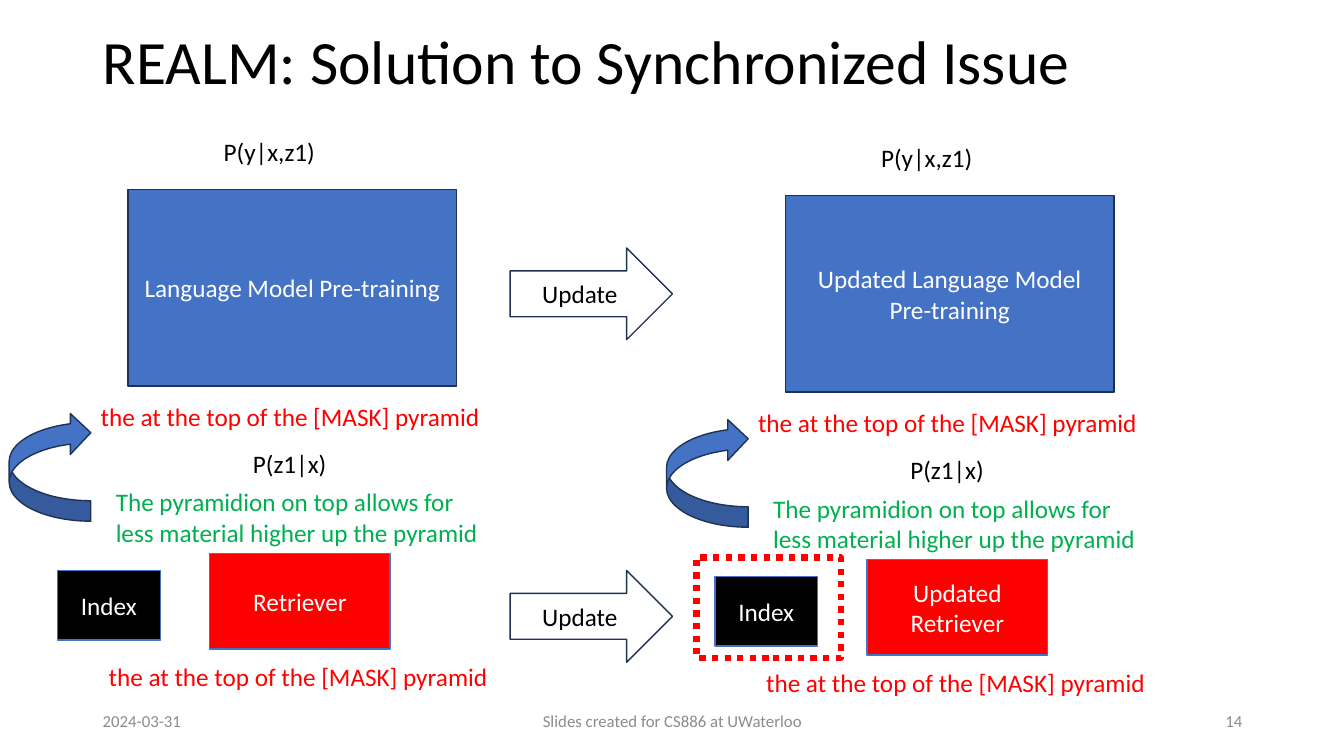
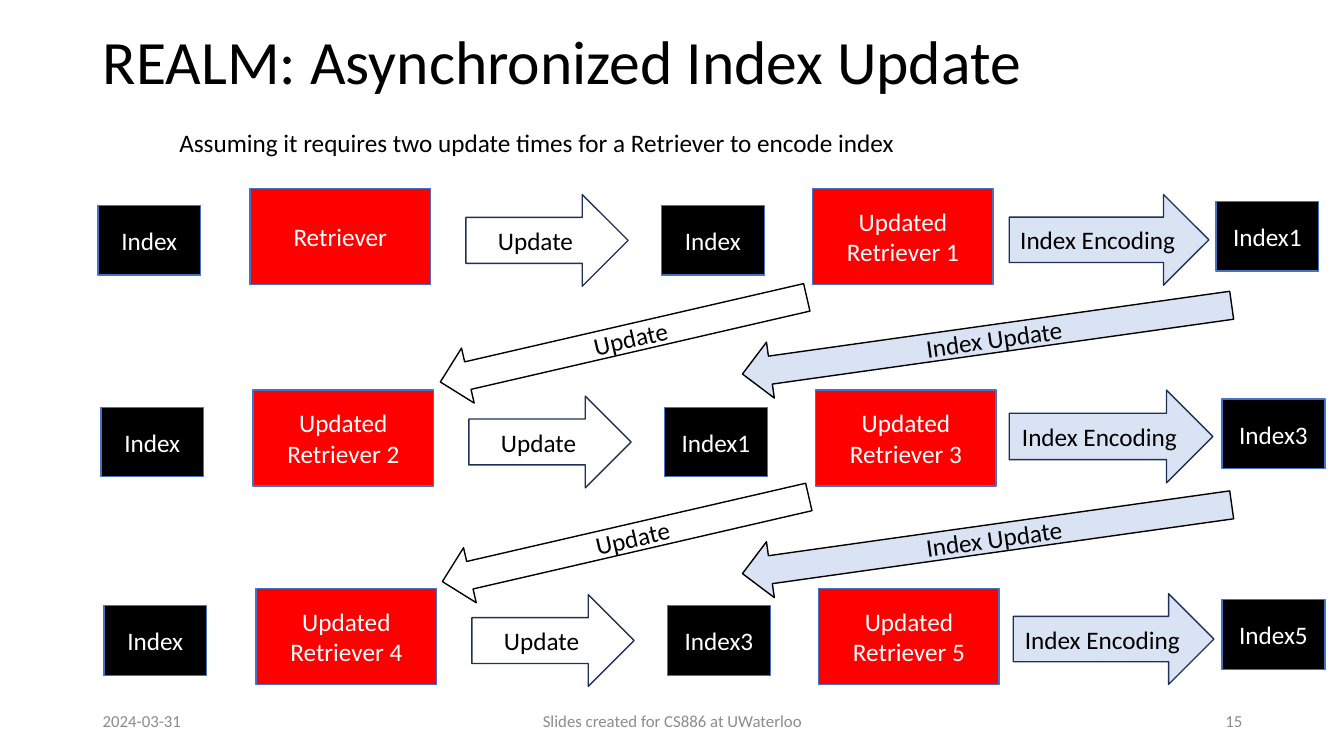
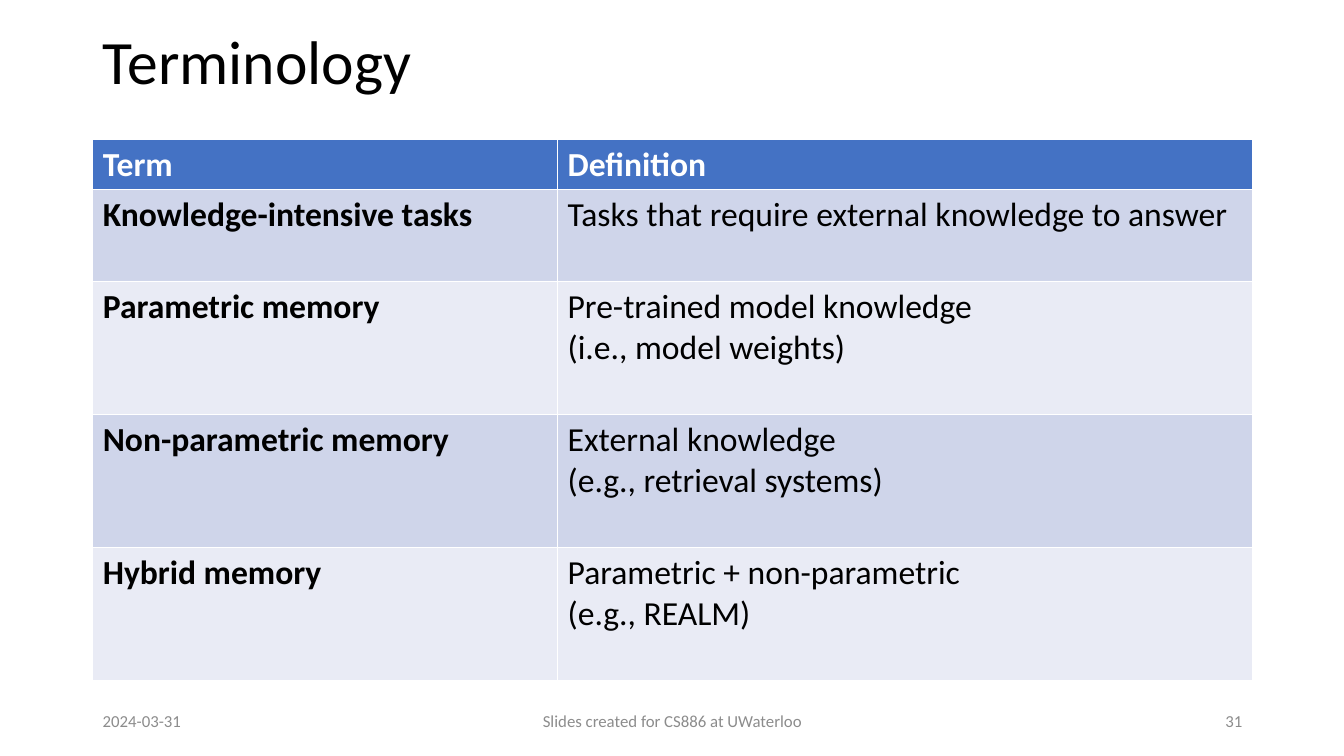
from pptx import Presentation
from pptx import util as u
from pptx.dml.color import RGBColor
from pptx.enum import dml, shapes, text

FONT = "Calibri"
BLACK, WHITE, GRAY = "000000", "FFFFFF", "8C8C8C"
RED, GREEN, BLUE, NAVY, PALE = "FF0000", "00B050", "4472C4", "1E3256", "DAE3F3"
BANDS = ["CFD5EA", "E9EBF5"]
KIND = shapes.MSO_SHAPE
ALIGN = text.PP_ALIGN
MIDDLE = text.MSO_ANCHOR.MIDDLE
rgb = RGBColor.from_string


def write(frame, words, color=BLACK, size=18, align=ALIGN.LEFT, bold=False):
    """Fill a text frame, one paragraph per line, in a single style."""
    frame.word_wrap = True
    frame.text = words
    for para in frame.paragraphs:
        para.alignment = align
        para.font.name = FONT
        para.font.size = u.Pt(size)
        para.font.bold = bold
        para.font.color.rgb = rgb(color)


def add_block(page, kind, place, words="", fill=None, line=NAVY, color=WHITE, angle=0):
    """Add an outlined shape with a centred label; place is left, top, width, height."""
    box = page.shapes.add_shape(kind, *map(u.Inches, place))
    box.shadow.inherit = False
    box.rotation = angle
    if fill:
        box.fill.solid()
        box.fill.fore_color.rgb = rgb(fill)
    else:
        box.fill.background()
    box.line.color.rgb = rgb(line)
    box.line.width = u.Pt(1)
    if words:
        box.text_frame.vertical_anchor = MIDDLE
        write(box.text_frame, words, color, align=ALIGN.CENTER)
    return box


deck = Presentation()
deck.slide_width = u.Inches(13.33)
deck.slide_height = u.Inches(7.5)

# Title and footer of every page
pages = []
for heading, number in [
    ("REALM: Solution to Synchronized Issue", "14"),
    ("REALM: Asynchronized Index Update", "15"),
    ("Terminology", "31"),
]:
    page = deck.slides.add_slide(deck.slide_layouts[5])
    pages.append(page)
    title = page.shapes.title
    title.left, title.top = u.Inches(0.92), u.Inches(0.15)
    title.width, title.height = u.Inches(11.5), u.Inches(0.99)
    title.text_frame.vertical_anchor = MIDDLE
    title.text_frame.auto_size = text.MSO_AUTO_SIZE.NONE
    write(title.text_frame, heading, size=44)
    title.text_frame.paragraphs[0].line_spacing = 0.9
    for left, width, words, align in [
        (0.92, 3, "2024-03-31", ALIGN.LEFT),
        (4.42, 4.5, "Slides created for CS886 at UWaterloo", ALIGN.CENTER),
        (9.42, 3, number, ALIGN.RIGHT),
    ]:
        footer = page.shapes.add_textbox(
            u.Inches(left), u.Inches(6.95), u.Inches(width), u.Inches(0.4))
        footer.text_frame.vertical_anchor = MIDDLE
        write(footer.text_frame, words, GRAY, 12, align)

sync_page, async_page, terms_page = pages

# The model before and after an update
masked = "the at the top of the [MASK] pyramid"
passage = "The pyramidion on top allows for less material higher up the pyramid"
for dx, dy, model, retriever in [
    (0, 0, "Language Model Pre-training", "Retriever"),
    (6.52, 0.06, "Updated Language Model Pre-training", "Updated Retriever"),
]:
    add_block(sync_page, KIND.RECTANGLE, (1.27 + dx, 1.88 + dy, 3.26, 1.95), model, BLUE)
    add_block(sync_page, KIND.RECTANGLE, (2.08 + dx, 5.49 + dy, 1.79, 0.95),
              retriever, RED, BLUE)
    add_block(sync_page, KIND.RECTANGLE, (0.57 + dx, 5.66 + dy, 1.02, 0.69),
              "Index", BLACK, BLUE)
    loop = add_block(sync_page, KIND.CURVED_RIGHT_ARROW,
                     (0.09 + dx, 4.09 + dy, 0.81, 1.08), fill=BLUE, angle=180)
    loop._element.spPr.get_or_add_xfrm().set("flipH", "1")
    for left, top, width, height, words, color in [
        (2.12, 1.3, 1.71, 0.4, "P(y|x,z1)", BLACK),
        (0.9, 3.93, 3.99, 0.4, masked, RED),
        (2.41, 4.4, 0.99, 0.4, "P(z1|x)", BLACK),
        (1.05, 4.78, 3.86, 0.71, passage, GREEN),
        (0.98, 6.51, 3.99, 0.4, masked, RED),
    ]:
        label = sync_page.shapes.add_textbox(
            u.Inches(left + dx), u.Inches(top + dy), u.Inches(width), u.Inches(height))
        write(label.text_frame, words, color)

for top in (2.46, 5.66):
    add_block(sync_page, KIND.RIGHT_ARROW, (5.06, top, 1.61, 0.91), "Update", color=BLACK)
stale_frame = add_block(sync_page, KIND.RECTANGLE, (6.91, 5.53, 1.43, 1), line=RED)
stale_frame.line.width = u.Pt(4.5)
stale_frame.line.dash_style = dml.MSO_LINE.ROUND_DOT

# Three rounds of updates, each ending in a newly encoded index
note = async_page.shapes.add_textbox(
    u.Inches(1.68), u.Inches(1.21), u.Inches(9.12), u.Inches(0.4))
write(note.text_frame,
      "Assuming it requires two update times for a Retriever to encode index")

for dx, top, before, index, after, encoding, new_index, new_place in [
    (0, 1.87, "Retriever", "Index", "Updated Retriever 1",
     (10.01, 1.93, 1.98, 0.9), "Index1", (12.06, 2)),
    (0.03, 3.87, "Updated Retriever 2", "Index1", "Updated Retriever 3",
     (10.01, 3.87, 2.02, 0.92), "Index3", (12.12, 3.96)),
    (0.06, 5.84, "Updated Retriever 4", "Index3", "Updated Retriever 5",
     (10.05, 5.89, 1.99, 0.9), "Index5", (12.12, 5.95)),
]:
    for left, words in [(2.48, before), (8.06, after)]:
        add_block(async_page, KIND.RECTANGLE, (left + dx, top, 1.79, 0.95),
                  words, RED, BLUE)
    for place, words in [
        ((0.97 + dx, top + 0.17), "Index"),
        ((6.56 + dx, top + 0.17), index),
        (new_place, new_index),
    ]:
        add_block(async_page, KIND.RECTANGLE, (*place, 1.02, 0.69), words, BLACK, BLUE)
    add_block(async_page, KIND.RIGHT_ARROW, (4.62 + dx, top + 0.06, 1.61, 0.91),
              "Update", color=BLACK)
    add_block(async_page, KIND.RIGHT_ARROW, encoding, "Index Encoding", PALE, color=BLACK)

for dx, top in [(0, 3.09), (0.02, 5.07)]:
    add_block(async_page, KIND.LEFT_ARROW, (4.32 + dx, top, 3.73, 0.56),
              "Update", None, BLACK, BLACK, 347)
    add_block(async_page, KIND.LEFT_ARROW, (7.34, top, 4.9, 0.56),
              "Index Update", PALE, BLACK, BLACK, 352)

# Terms and definitions
terms = [
    ("Term", "Definition"),
    ("Knowledge-intensive tasks", "Tasks that require external knowledge to answer"),
    ("Parametric memory", "Pre-trained model knowledge\n(i.e., model weights)"),
    ("Non-parametric memory", "External knowledge\n(e.g., retrieval systems)"),
    ("Hybrid memory", "Parametric + non-parametric\n(e.g., REALM)"),
]
heights = [0.5, 0.91, 1.32, 1.32, 1.32]
table = terms_page.shapes.add_table(
    len(terms), 2, u.Inches(0.92), u.Inches(1.38),
    u.Inches(11.5), u.Inches(sum(heights))).table
for column, width in zip(table.columns, (4.61, 6.89)):
    column.width = u.Inches(width)
for r, (entry, height) in enumerate(zip(terms, heights)):
    table.rows[r].height = u.Inches(height)
    for c, words in enumerate(entry):
        cell = table.cell(r, c)
        cell.fill.solid()
        cell.fill.fore_color.rgb = rgb(BANDS[(r - 1) % 2] if r else BLUE)
        write(cell.text_frame, words, BLACK if r else WHITE, 24, bold=r == 0 or c == 0)

deck.save("out.pptx")
